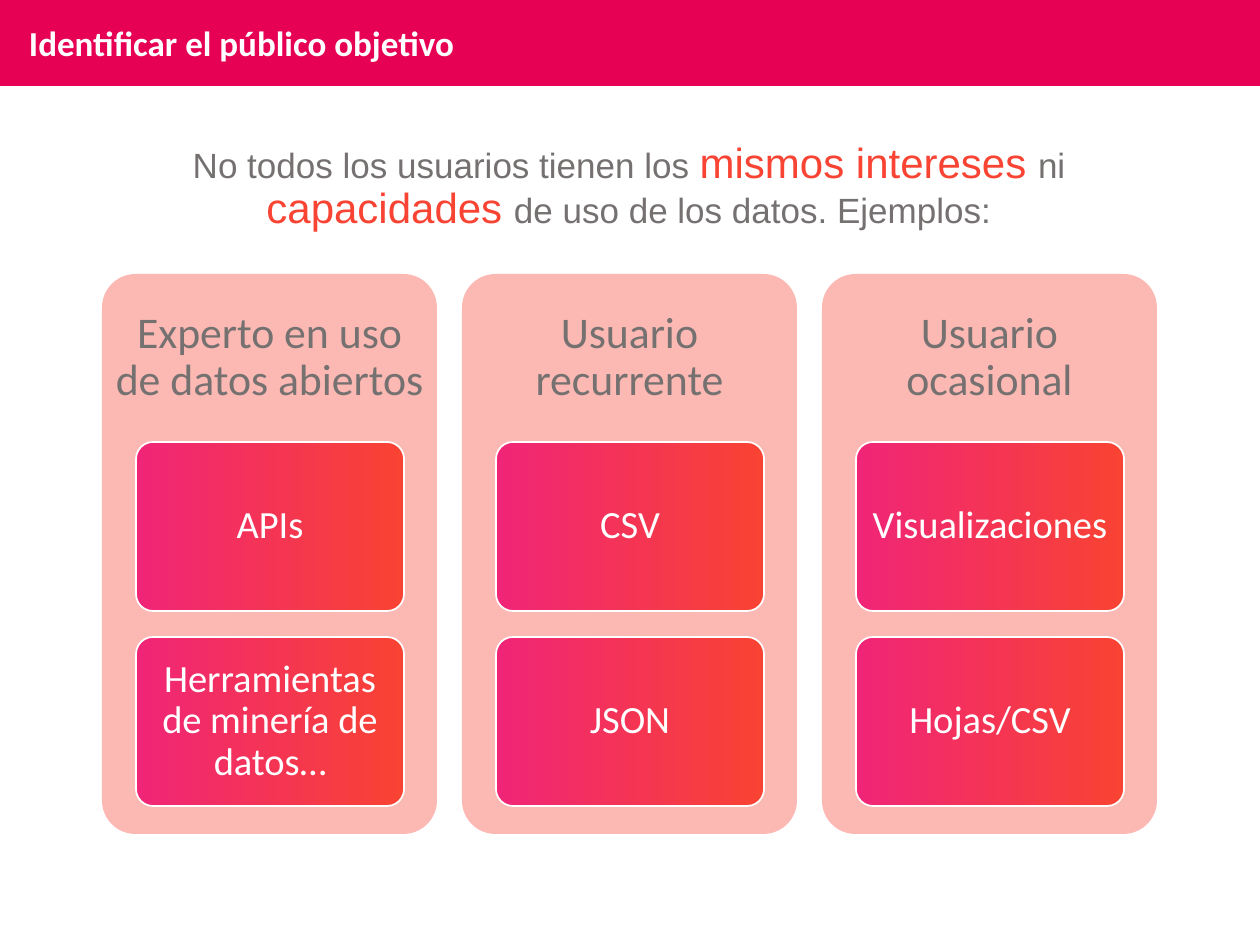
from lxml.etree import SubElement
from pptx import Presentation
from pptx.dml.color import RGBColor
from pptx.enum.shapes import MSO_SHAPE as Shape
from pptx.enum.text import MSO_ANCHOR as Anchor, PP_ALIGN as Align
from pptx.oxml.ns import qn
from pptx.util import Emu, Pt

CRIMSON = RGBColor(0xE6, 0x01, 0x54)
PINK = RGBColor(0xF0, 0x25, 0x77)
CORAL = RGBColor(0xF9, 0x43, 0x33)
GRAY = RGBColor(0x76, 0x71, 0x71)
WHITE = RGBColor(0xFF, 0xFF, 0xFF)

TITLE = {"name": "Calibri", "size": Pt(20), "bold": True, "color": WHITE}
BODY = {"name": "Arial", "size": Pt(20), "color": GRAY}
EMPHASIS = {"name": "Arial", "size": Pt(24), "color": CORAL}
HEADING = {"name": "Calibri", "size": Pt(25), "color": GRAY}
CARD = {"name": "Calibri", "size": Pt(22), "color": WHITE}
CENTERED = {"alignment": Align.CENTER, "line_spacing": 0.9}

INTRO = [
    ("No todos los usuarios tienen los ", BODY),
    ("mismos intereses ", EMPHASIS),
    ("ni ", BODY),
    ("capacidades ", EMPHASIS),
    ("de uso de los datos. Ejemplos:", BODY),
]
PROFILES = [
    ("Experto en uso de datos abiertos", ["APIs", "Herramientas de minería de datos…"]),
    ("Usuario recurrente", ["CSV", "JSON"]),
    ("Usuario ocasional", ["Visualizaciones", "Hojas/CSV"]),
]


def px(length):
    return Emu(round(length * 914400 / 126))


class SlideBuilder:
    """Draws the elements of the current slide in one shared style."""

    def __init__(self, slide):
        self.slide = slide

    def set_text(self, shape, runs, paragraph_format, insets=(13, 6), anchor=Anchor.TOP):
        frame = shape.text_frame
        frame.word_wrap = True
        frame.vertical_anchor = anchor
        frame.margin_left = frame.margin_right = px(insets[0])
        frame.margin_top = frame.margin_bottom = px(insets[1])
        paragraph = frame.paragraphs[0]
        for name, value in paragraph_format.items():
            setattr(paragraph, name, value)
        for text, style in runs:
            run = paragraph.add_run()
            run.text = text
            for name, value in style.items():
                if name == "color":
                    run.font.color.rgb = value
                else:
                    setattr(run.font, name, value)

    def text(self, box, runs, paragraph_format, **layout):
        shape = self.slide.shapes.add_textbox(*map(px, box))
        self.set_text(shape, runs, paragraph_format, **layout)

    def block(self, kind, box, color):
        shape = self.slide.shapes.add_shape(kind, *map(px, box))
        shape.shadow.inherit = False
        shape.fill.solid()
        shape.fill.fore_color.rgb = color
        shape.line.fill.background()
        return shape

    def panel(self, box):
        shape = self.block(Shape.ROUNDED_RECTANGLE, box, CORAL)
        shape.adjustments[0] = 0.1
        color = shape.element.spPr.find(qn("a:solidFill"))[0]
        SubElement(color, qn("a:alpha"), val="37000")

    def card(self, box, text):
        shape = self.block(Shape.ROUNDED_RECTANGLE, box, CORAL)
        shape.adjustments[0] = 0.1
        shape.fill.gradient()
        shape.fill.gradient_angle = 0
        for stop, color in zip(shape.fill.gradient_stops, (PINK, CORAL)):
            stop.color.rgb = color
        shape.line.color.rgb = WHITE
        shape.line.width = Pt(1)
        self.set_text(shape, [(text, CARD)], CENTERED, insets=(8, 6), anchor=Anchor.MIDDLE)


def main():
    presentation = Presentation()
    presentation.slide_width, presentation.slide_height = px(1260), px(945)
    builder = SlideBuilder(presentation.slides.add_slide(presentation.slide_layouts[6]))

    builder.block(Shape.RECTANGLE, (0, 0, 1260, 86), CRIMSON)
    builder.text((16, 15, 728, 55), [("Identificar el público objetivo", TITLE)], {})
    builder.text((83, 136, 1092, 522), INTRO, {**CENTERED, "space_before": Pt(10)})

    for column, (heading, cards) in enumerate(PROFILES):
        left = 102 + 360 * column
        builder.panel((left, 274, 335, 560))
        builder.text((left, 274, 335, 168), [(heading, HEADING)], CENTERED,
                     insets=(12, 12), anchor=Anchor.MIDDLE)
        for row, text in enumerate(cards):
            builder.card((left + 34, 442 + 195 * row, 268, 169), text)

    presentation.save("out.pptx")


if __name__ == "__main__":
    main()
